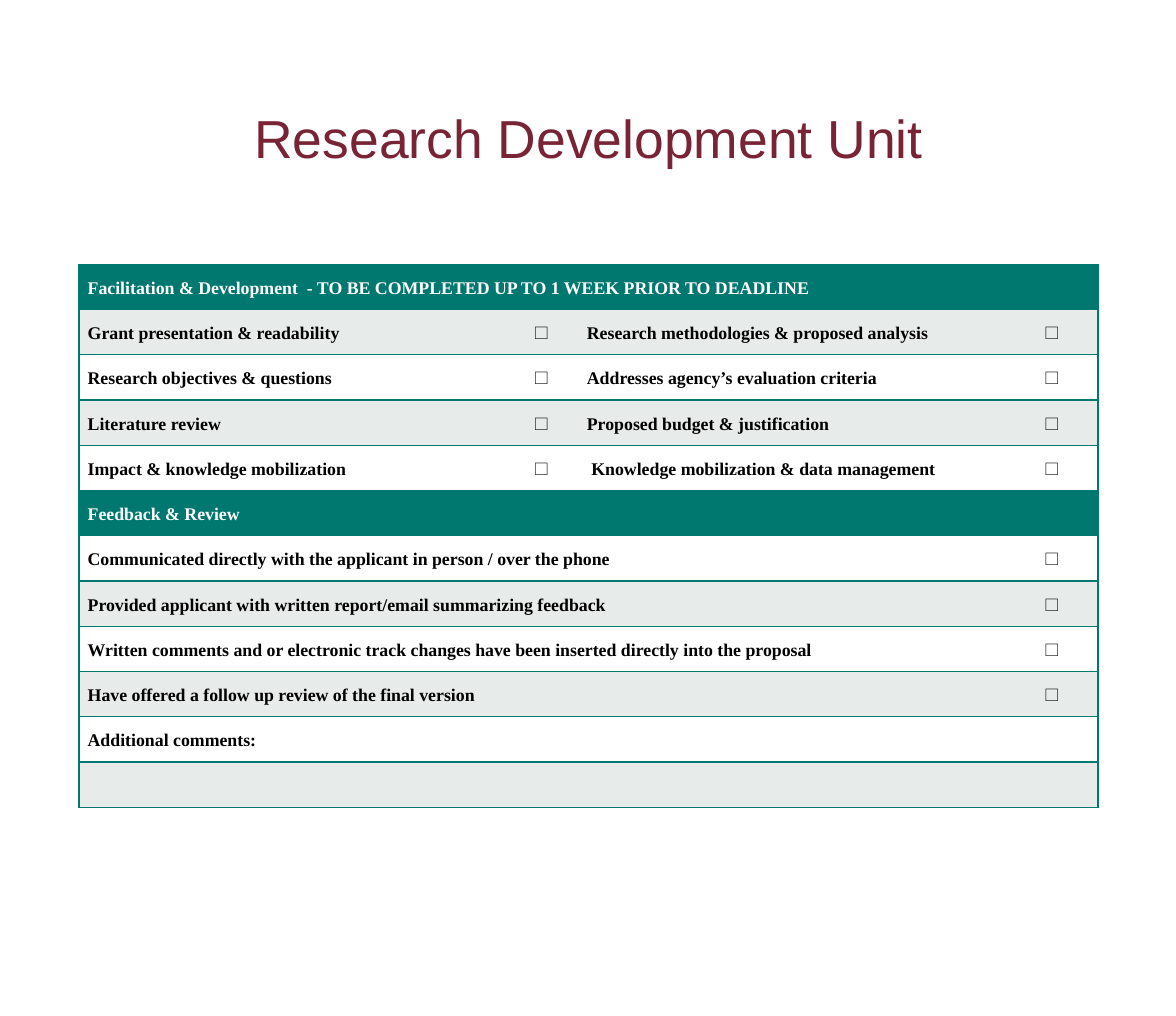
from pptx import Presentation
from pptx.dml.color import RGBColor
from pptx.enum.text import MSO_ANCHOR, PP_ALIGN
from pptx.oxml.ns import qn
from pptx.util import Pt
from lxml.etree import SubElement

# Content: each row lists (text, columns spanned)
BOX = "☐"
TITLE = "Research Development Unit"
PAIRS = [
    ("Grant presentation & readability", "Research methodologies & proposed analysis"),
    ("Research objectives & questions", "Addresses agency’s evaluation criteria"),
    ("Literature review", "Proposed budget & justification"),
    ("Impact & knowledge mobilization", " Knowledge mobilization & data management"),
]
FEEDBACK = [
    "Communicated directly with the applicant in person / over the phone",
    "Provided applicant with written report/email summarizing feedback",
    "Written comments and or electronic track changes have been inserted directly into the proposal",
    "Have offered a follow up review of the final version",
]
HEADINGS = [
    "Facilitation & Development  - TO BE COMPLETED UP TO 1 WEEK PRIOR TO DEADLINE",
    "Feedback & Review",
]
ROWS = [
    [(HEADINGS[0], 4)],
    *[[(left, 1), (BOX, 1), (right, 1), (BOX, 1)] for left, right in PAIRS],
    [(HEADINGS[1], 4)],
    *[[(text, 3), (BOX, 1)] for text in FEEDBACK],
    [("Additional comments:", 4)],
    [("", 4)],
]

# Layout in px, 100 px to the inch
PX = 9144
SLIDE_SIZE = (1100, 950)
TITLE_BOX = (74, 94, 953, 69)
TABLE_BOX = (74, 247, 953, 508)
COLUMN_WIDTHS = [398, 69, 400, 86]
COLORS = {"title": "782336", "green": "00776F", "band": "E7ECEB",
          "white": "FFFFFF", "text": "000000"}
CELL_FORMAT = {"margin_left": 8 * PX, "margin_right": 8 * PX, "margin_top": 0,
               "margin_bottom": 0, "vertical_anchor": MSO_ANCHOR.MIDDLE}
TITLE_FORMAT = {"margin_left": 12 * PX, "margin_right": 12 * PX, "margin_top": 6 * PX,
                "margin_bottom": 6 * PX, "vertical_anchor": MSO_ANCHOR.MIDDLE,
                "word_wrap": True}


def apply(target, values):
    for name, value in values.items():
        setattr(target, name, value)


def write(paragraph, text, color, **font):
    run = paragraph.add_run()
    run.text = text
    apply(run.font, font)
    run.font.color.rgb = RGBColor.from_string(COLORS[color])


def set_borders(cell, visible):
    properties = cell._tc.get_or_add_tcPr()
    for side in "LRTB":
        line = SubElement(properties, qn(f"a:ln{side}"), w=str(Pt(1)))
        if side in visible:
            fill = SubElement(line, qn("a:solidFill"))
            SubElement(fill, qn("a:srgbClr"), val=COLORS["green"])
        else:
            SubElement(line, qn("a:noFill"))


def format_cell(cell, column, span, fill):
    apply(cell, CELL_FORMAT)
    left = "L" if column == 0 else ""
    right = "R" if column + span == len(COLUMN_WIDTHS) else ""
    set_borders(cell, "TB" + left + right)
    cell.fill.solid()
    cell.fill.fore_color.rgb = RGBColor.from_string(COLORS[fill])


presentation = Presentation()
presentation.slide_width, presentation.slide_height = [size * PX for size in SLIDE_SIZE]
slide = presentation.slides.add_slide(presentation.slide_layouts[6])

# Title
frame = slide.shapes.add_textbox(*[length * PX for length in TITLE_BOX]).text_frame
apply(frame, TITLE_FORMAT)
frame.paragraphs[0].alignment = PP_ALIGN.CENTER
write(frame.paragraphs[0], TITLE, "title", name="Arial", size=Pt(36))

# Checklist table
table = slide.shapes.add_table(len(ROWS), len(COLUMN_WIDTHS),
                               *[length * PX for length in TABLE_BOX]).table
for column, width in zip(table.columns, COLUMN_WIDTHS):
    column.width = width * PX

for row_index, row in enumerate(ROWS):
    is_heading = row[0][0] in HEADINGS
    fill = "green" if is_heading else "band" if row_index % 2 else "white"
    start = 0
    for text, span in row:
        cell = table.cell(row_index, start)
        for column in range(start, start + span):
            format_cell(table.cell(row_index, column), column,
                        span if column == start else 1, fill)
        if span > 1:
            cell.merge(table.cell(row_index, start + span - 1))
        if text:
            paragraph = cell.text_frame.paragraphs[0]
            paragraph.line_spacing = 1.15
            paragraph.alignment = PP_ALIGN.CENTER if text == BOX else PP_ALIGN.LEFT
            write(paragraph, text, "white" if is_heading else "text",
                  name="Times New Roman", size=Pt(12), bold=text != BOX)
        start += span

presentation.save("out.pptx")
